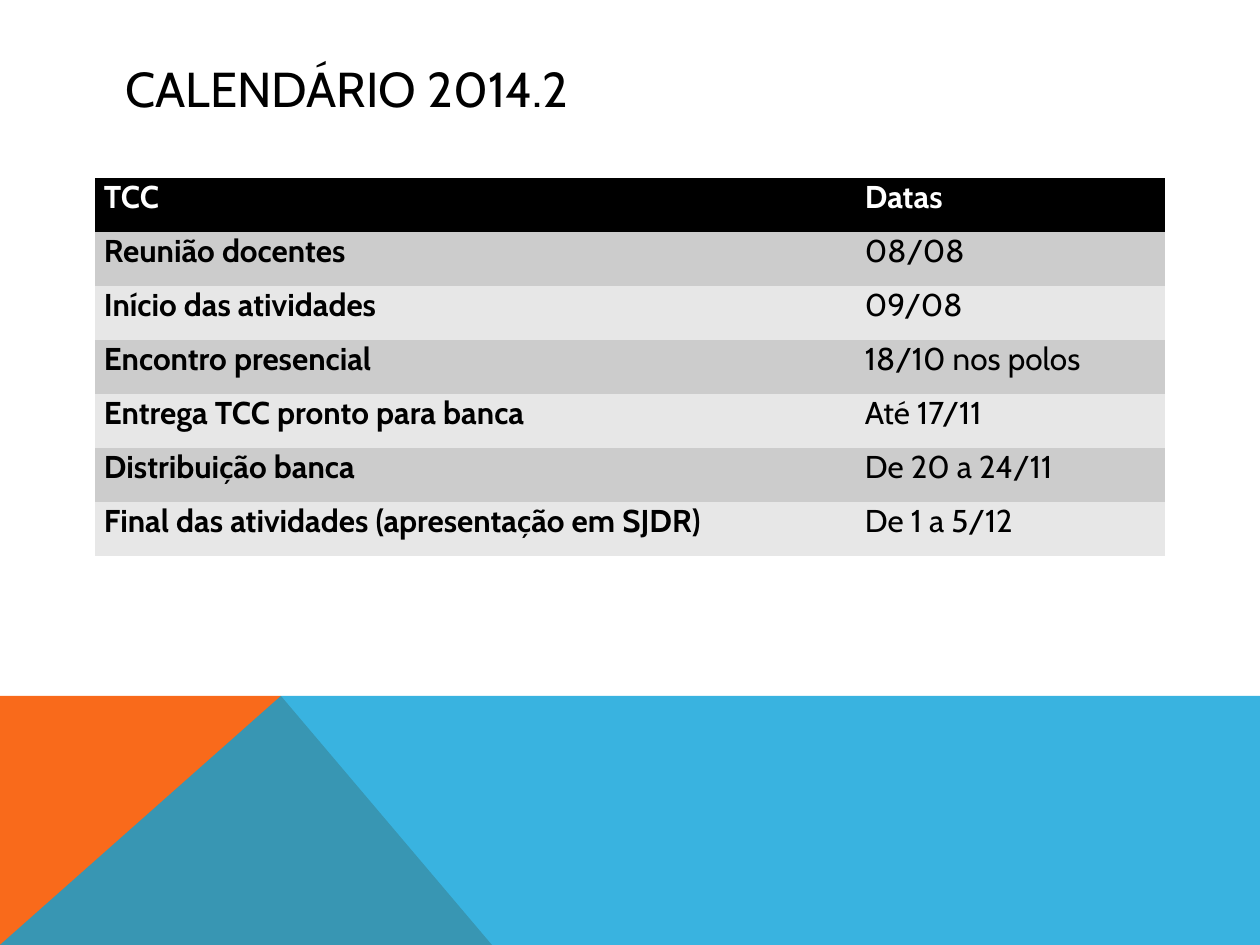
from dataclasses import dataclass
from typing import Any

from lxml.etree import SubElement
from pptx import Presentation
from pptx.dml.color import RGBColor
from pptx.enum.text import MSO_ANCHOR as Anchor
from pptx.oxml.ns import qn
from pptx.util import Pt

PX = 914400 / 126
FONT = "Cabin"
BLACK, WHITE = "000000", "FFFFFF"
BANDS = ("CCCCCC", "E7E7E7")
NO_GRID_STYLE = "{2D5ABB26-0587-4C30-8999-92F81FD0307C}"


@dataclass(frozen=True)
class Facet:
    points: tuple[tuple[int, int], ...]
    color: str
    opacity: int = 100


@dataclass(frozen=True)
class Milestone:
    activity: str
    date: str


FACETS = (
    Facet(((0, 945), (0, 696), (281, 696), (492, 945)), "F96A1B"),
    Facet(((0, 945), (281, 696), (1260, 696), (1260, 945)), "08A1D9", 80),
)
HEADING = Milestone("TCC", "Datas")
MILESTONES = (
    Milestone("Reunião docentes", "08/08"),
    Milestone("Início das atividades", "09/08"),
    Milestone("Encontro presencial", "18/10 nos polos"),
    Milestone("Entrega TCC pronto para banca", "Até 17/11"),
    Milestone("Distribuição banca", "De 20 a 24/11"),
    Milestone("Final das atividades (apresentação em SJDR)", "De 1 a 5/12"),
)


def px(length: int) -> int:
    return round(length * PX)


def paint(fill: Any, color: str) -> None:
    fill.solid()
    fill.fore_color.rgb = RGBColor.from_string(color)


def apply(target: Any, values: dict[str, Any]) -> None:
    for name, value in values.items():
        setattr(target, name, value)


def write(paragraph: Any, wording: str, size: int, color: str, bold: bool = False) -> None:
    run = paragraph.add_run()
    run.text = wording
    apply(run.font, {"name": FONT, "size": Pt(size), "bold": bold})
    paint(run.font.fill, color)


def draw_facet(slide: Any, facet: Facet) -> None:
    start, *corners = facet.points
    outline = slide.shapes.build_freeform(*start, scale=PX)
    outline.add_line_segments(corners, close=True)
    shape = outline.convert_to_shape()
    shape.shadow.inherit = False
    shape.line.fill.background()
    paint(shape.fill, facet.color)
    if facet.opacity < 100:
        tint = shape.element.spPr.find(f"{qn('a:solidFill')}/{qn('a:srgbClr')}")
        SubElement(tint, qn("a:alpha"), val=str(facet.opacity * 1000))


def draw_title(slide: Any, wording: str) -> None:
    title = slide.shapes.add_textbox(px(113), px(50), px(1036), px(76)).text_frame
    apply(title, {"word_wrap": True, "vertical_anchor": Anchor.MIDDLE})
    write(title.paragraphs[0], wording, 28, BLACK)


def fill_cell(cell: Any, wording: str, background: str, color: str, bold: bool) -> None:
    apply(cell, {"margin_left": px(9), "margin_right": px(9),
                 "margin_top": 0, "margin_bottom": 0})
    paint(cell.fill, background)
    write(cell.text_frame.paragraphs[0], wording, 18, color, bold)


def draw_calendar(slide: Any, heading: Milestone, milestones: tuple[Milestone, ...]) -> None:
    entries = (heading, *milestones)
    widths, row_height = (761, 309), 54
    frame = slide.shapes.add_table(
        len(entries), len(widths), px(95), px(178),
        px(sum(widths)), px(row_height * len(entries)))
    frame.element.find(f".//{qn('a:tableStyleId')}").text = NO_GRID_STYLE
    calendar = frame.table
    for column, width in zip(calendar.columns, widths):
        column.width = px(width)
    for index, (row, entry) in enumerate(zip(calendar.rows, entries)):
        row.height = px(row_height)
        is_heading = index == 0
        background = BLACK if is_heading else BANDS[(index - 1) % 2]
        color = WHITE if is_heading else BLACK
        activity, date = row.cells
        fill_cell(activity, entry.activity, background, color, True)
        fill_cell(date, entry.date, background, color, is_heading)


def main() -> None:
    deck = Presentation()
    apply(deck, {"slide_width": px(1260), "slide_height": px(945)})
    slide = deck.slides.add_slide(deck.slide_layouts[6])
    paint(slide.background.fill, WHITE)
    for facet in FACETS:
        draw_facet(slide, facet)
    draw_title(slide, "CALENDÁRIO 2014.2")
    draw_calendar(slide, HEADING, MILESTONES)
    deck.save("out.pptx")


if __name__ == "__main__":
    main()
